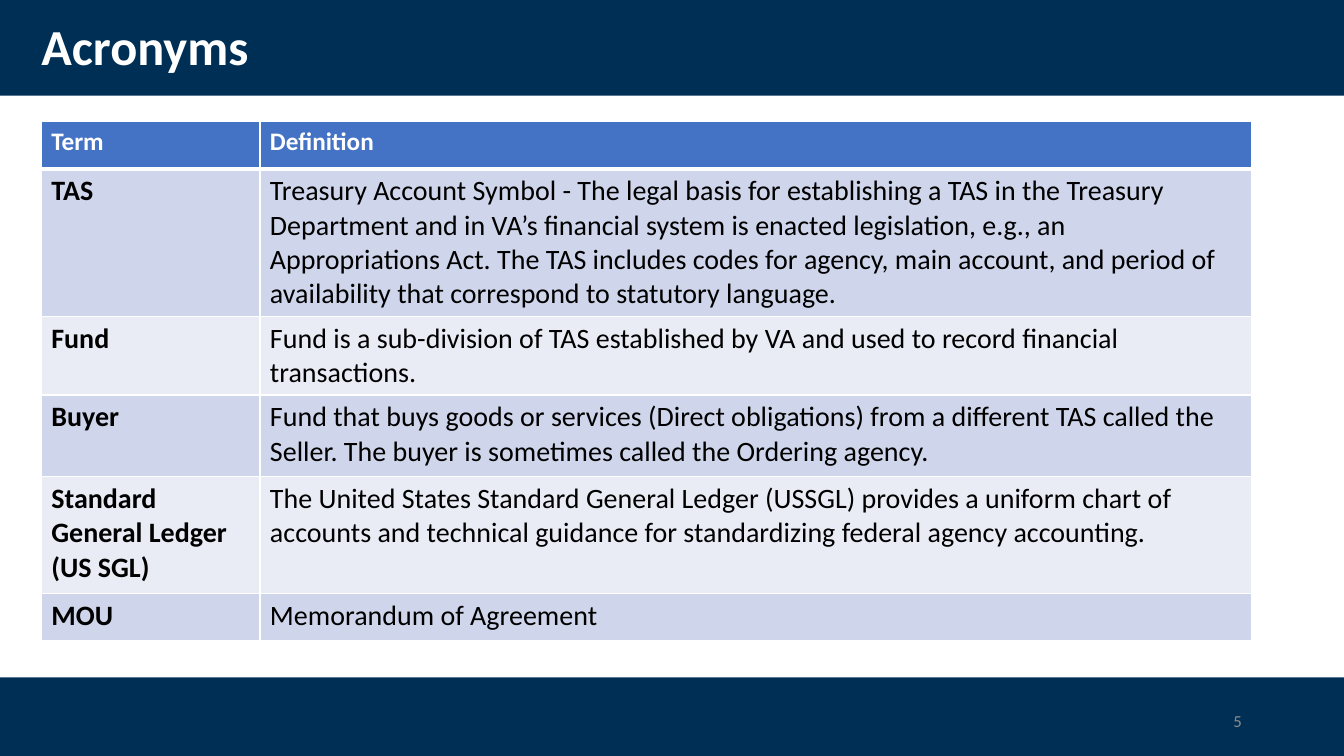
"""Build the acronyms slide with its table of terms and definitions."""
from typing import Any, NamedTuple

import pptx
import pptx.dml.color
import pptx.enum.shapes
import pptx.enum.text
import pptx.oxml
import pptx.oxml.ns
import pptx.util

Cm = pptx.util.Cm
Pt = pptx.util.Pt
RGBColor = pptx.dml.color.RGBColor
Align = pptx.enum.text.PP_ALIGN
Anchor = pptx.enum.text.MSO_ANCHOR

NAVY = RGBColor(0x00, 0x2F, 0x56)
BLUE = RGBColor(0x44, 0x72, 0xC4)
DARK = RGBColor(0xCF, 0xD5, 0xEA)
LIGHT = RGBColor(0xE9, 0xEB, 0xF5)
WHITE = RGBColor(0xFF, 0xFF, 0xFF)
BLACK = RGBColor(0x00, 0x00, 0x00)
GRAY = RGBColor(0x8C, 0x8C, 0x8C)

WIDTH = 33.87
COLS = (5.51, 24.99)


class Box(NamedTuple):
    left: float
    top: float
    width: float
    height: float

    def spot(self) -> tuple:
        return tuple(Cm(side) for side in self)


class Entry(NamedTuple):
    term: str
    text: str
    height: float


BANDS = (Box(0, 0, WIDTH, 2.41), Box(0, 17.07, WIDTH, 1.98))
TITLE = Box(0.79, 0.38, 29.21, 1.73)
TABLE = Box(1.04, 3.07, sum(COLS), 13.08)
NUMBER = Box(23.93, 17.65, 7.62, 1.02)

ENTRIES = (
    Entry("Term", "Definition", 1.19),
    Entry("TAS", "Treasury Account Symbol - The legal basis for establishing a TAS in the "
          "Treasury Department and in VA’s financial system is enacted legislation, e.g., "
          "an Appropriations Act. The TAS includes codes for agency, main account, and "
          "period of availability that correspond to statutory language.", 3.71),
    Entry("Fund", "Fund is a sub-division of TAS established by VA and used to record "
          "financial transactions.", 1.98),
    Entry("Buyer", "Fund that buys goods or services (Direct obligations) from a different "
          "TAS called the Seller. The buyer is sometimes called the Ordering agency.", 2.06),
    Entry("Standard General Ledger (US SGL)", "The United States Standard General Ledger "
          "(USSGL) provides a uniform chart of accounts and technical guidance for "
          "standardizing federal agency accounting.", 2.95),
    Entry("MOU", "Memorandum of Agreement", 1.19),
)


def write(frame: Any, text: str, size: int, color: RGBColor, bold: bool = False) -> Any:
    """Fill a text frame with one formatted paragraph and return it."""
    para = frame.paragraphs[0]
    run = para.add_run()
    run.text = text
    for name, value in {"name": "Calibri", "size": Pt(size), "bold": bold}.items():
        setattr(run.font, name, value)
    run.font.color.rgb = color
    return para


def setup(frame: Any) -> None:
    """Wrap and centre a text frame vertically."""
    format = {
        "word_wrap": True,
        "auto_size": pptx.enum.text.MSO_AUTO_SIZE.NONE,
        "vertical_anchor": Anchor.MIDDLE,
    }
    for name, value in format.items():
        setattr(frame, name, value)


def edge(cell: Any, widths: dict[str, int]) -> None:
    """Give a cell white borders of the given point widths."""
    props = cell._tc.get_or_add_tcPr()
    for side, width in widths.items():
        props.append(pptx.oxml.parse_xml(
            f'<a:ln{side} {pptx.oxml.ns.nsdecls("a")} w="{Pt(width)}"><a:solidFill>'
            f'<a:srgbClr val="{WHITE}"/></a:solidFill></a:ln{side}>'))


def add_title(slide: Any) -> None:
    """Write the title over the navy bands."""
    title = slide.shapes.title
    for name, value in zip(Box._fields, TITLE.spot()):
        setattr(title, name, value)
    setup(title.text_frame)
    para = write(title.text_frame, "Acronyms", 36, WHITE, True)
    para.alignment = Align.LEFT
    para.line_spacing = 0.9
    for box in BANDS:
        band = slide.shapes.add_shape(pptx.enum.shapes.MSO_SHAPE.RECTANGLE, *box.spot())
        band.shadow.inherit = False
        band.fill.solid()
        band.fill.fore_color.rgb = NAVY
        band.line.fill.background()
        title.element.addprevious(band.element)


def add_terms(slide: Any) -> None:
    """Draw the table of terms."""
    table = slide.shapes.add_table(len(ENTRIES), len(COLS), *TABLE.spot()).table
    for col, width in zip(table.columns, COLS):
        col.width = Cm(width)
    for row, entry in enumerate(ENTRIES):
        table.rows[row].height = Cm(entry.height)
        head = row == 0
        fill = BLUE if head else DARK if row % 2 else LIGHT
        widths = {"L": 1, "R": 1, "T": 3 if row == 1 else 1, "B": 3 if head else 1}
        for col, text in enumerate((entry.term, entry.text)):
            cell = table.cell(row, col)
            edge(cell, widths)
            cell.fill.solid()
            cell.fill.fore_color.rgb = fill
            write(cell.text_frame, text, 18 if head else 20,
                  WHITE if head else BLACK, head or col == 0)


def add_number(slide: Any) -> None:
    """Write the page number in the lower band."""
    frame = slide.shapes.add_textbox(*NUMBER.spot()).text_frame
    setup(frame)
    write(frame, "5", 12, GRAY).alignment = Align.RIGHT


def main() -> None:
    """Build and save the deck."""
    deck = pptx.Presentation()
    deck.slide_width = Cm(WIDTH)
    deck.slide_height = Cm(19.05)
    slide = deck.slides.add_slide(deck.slide_layouts[5])
    add_title(slide)
    add_terms(slide)
    add_number(slide)
    deck.save("out.pptx")


if __name__ == "__main__":
    main()
